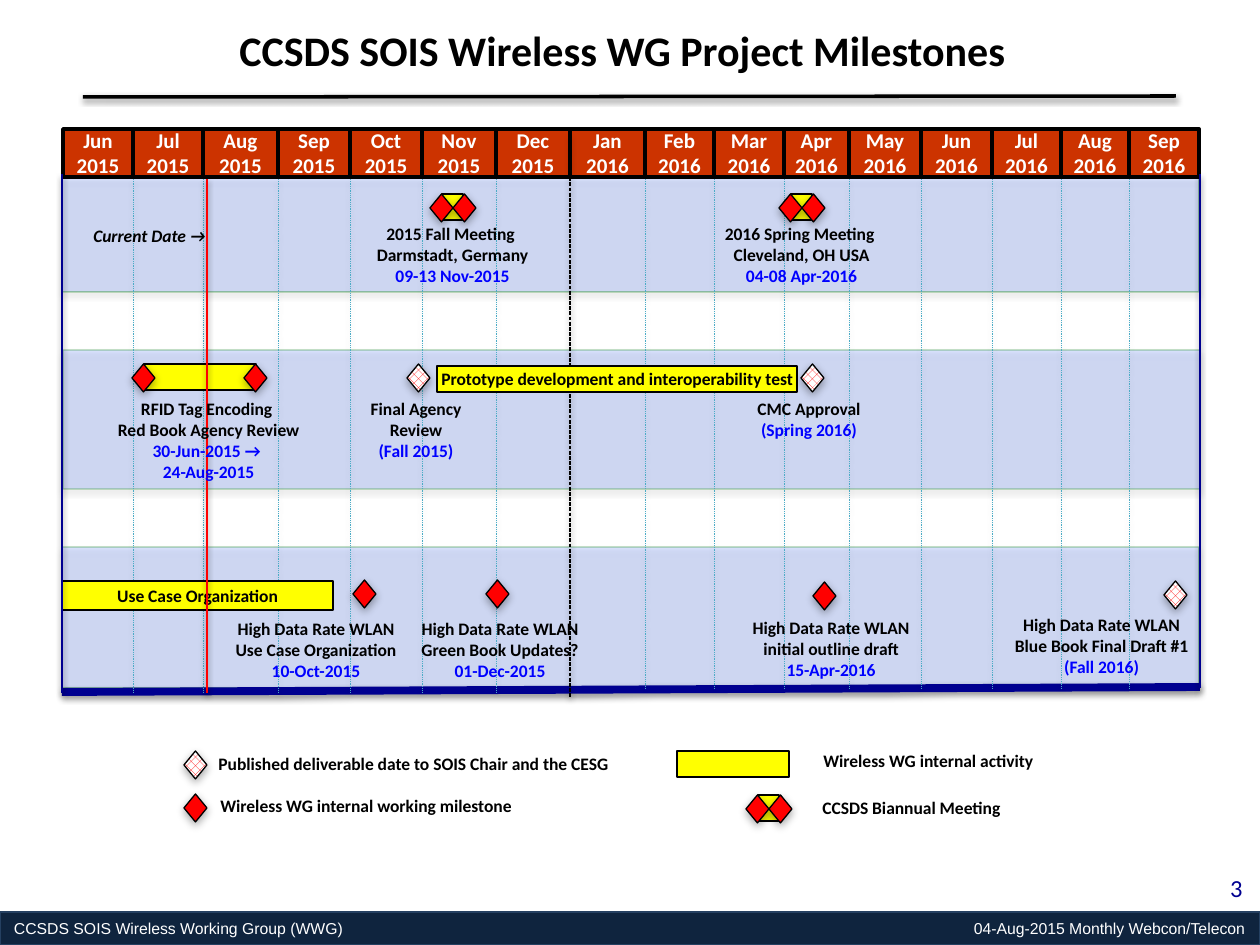
from typing import NamedTuple

from lxml import etree
from pptx import Presentation
from pptx.dml.color import RGBColor
from pptx.enum.dml import MSO_PATTERN
from pptx.enum.shapes import MSO_CONNECTOR, MSO_SHAPE
from pptx.enum.text import MSO_ANCHOR, PP_ALIGN
from pptx.oxml.ns import qn
from pptx.util import Emu, Pt

RECT, DIAMOND = MSO_SHAPE.RECTANGLE, MSO_SHAPE.DIAMOND
STRAIGHT = MSO_CONNECTOR.STRAIGHT
DOTTED_PATTERN = MSO_PATTERN.PERCENT_50
LEFT, CENTER, RIGHT = PP_ALIGN.LEFT, PP_ALIGN.CENTER, PP_ALIGN.RIGHT
MIDDLE = MSO_ANCHOR.MIDDLE

BLACK, WHITE, RED, YELLOW = "000000", "FFFFFF", "FF0000", "FFFF00"
NAVY, BLUE, HEADER, GRID = "000090", "0000FF", "CC3300", "4BACC6"

MONTHS = "Jun Jul Aug Sep Oct Nov Dec Jan Feb Mar Apr May Jun Jul Aug Sep".split()
MONTH_EDGES = [63, 133, 203, 278, 350, 422, 496, 570, 645,
               714, 784, 849, 921, 992, 1061, 1129, 1199]
NEW_YEAR = MONTHS.index("Jan")
HEADER_TOP, HEADER_HEIGHT = 129, 48


class Shadow(NamedTuple):
    alpha: int
    blur: float
    distance: float


BAND_SHADOW = Shadow(35, 3.1, 1.8)
LINE_SHADOW = Shadow(38, 3.1, 1.6)
DIAMOND_SHADOW = Shadow(35, 5, 1.8)


class Box(NamedTuple):
    left: int
    top: int
    width: int
    height: int


class Caption(NamedTuple):
    box: Box
    lines: list[str]
    date_lines: int = 0
    align: PP_ALIGN = CENTER
    italic: bool = False


class Milestone(NamedTuple):
    left: int
    top: int
    published: bool = False


class Activity(NamedTuple):
    box: Box
    label: str = ""


BANDS = [Box(63, 350, 1137, 139), Box(62, 547, 1137, 141), Box(62, 178, 1137, 114)]

ACTIVITIES = [
    Activity(Box(144, 364, 112, 26)),
    Activity(Box(437, 366, 360, 26), "Prototype development and interoperability test"),
    Activity(Box(62, 581, 271, 29), "Use Case Organization"),
    Activity(Box(677, 751, 112, 26)),
]
MEETINGS = [(430, 194), (779, 194), (746, 795)]
MILESTONES = [
    Milestone(244, 364), Milestone(132, 364),
    Milestone(407, 364, True), Milestone(801, 364, True),
    Milestone(353, 580), Milestone(486, 580),
    Milestone(813, 582), Milestone(1164, 581, True),
    Milestone(184, 751, True), Milestone(184, 794),
]
CAPTIONS = [
    Caption(Box(363, 217, 179, 77),
            ["2015 Fall Meeting ", "Darmstadt, Germany", "09-13 Nov-2015"], 1),
    Caption(Box(712, 217, 179, 77),
            ["2016 Spring Meeting ", "Cleveland, OH USA", "04-08 Apr-2016"], 1),
    Caption(Box(93, 392, 231, 97),
            ["RFID Tag Encoding ", "Red Book Agency Review", "30-Jun-2015 → ", "24-Aug-2015"], 2),
    Caption(Box(333, 392, 166, 77), ["Final Agency Review", "(Fall 2015)"], 1),
    Caption(Box(726, 392, 166, 55), ["CMC Approval", "(Spring 2016)"], 1),
    Caption(Box(220, 612, 192, 77),
            ["High Data Rate WLAN", "Use Case Organization", "10-Oct-2015"], 1),
    Caption(Box(399, 612, 202, 77),
            ["High Data Rate WLAN", "Green Book Updates?", "01-Dec-2015"], 1),
    Caption(Box(721, 611, 220, 77),
            ["High Data Rate WLAN", "initial outline draft", "15-Apr-2016"], 1),
    Caption(Box(992, 608, 219, 77),
            ["High Data Rate WLAN", "Blue Book Final Draft #1", "(Fall 2016)"], 1),
    Caption(Box(64, 219, 171, 34), ["Current Date →"], italic=True),
    Caption(Box(206, 747, 474, 34),
            ["Published deliverable date to SOIS Chair and the CESG"], align=LEFT),
    Caption(Box(208, 789, 334, 34), ["Wireless WG internal working milestone"], align=LEFT),
    Caption(Box(811, 744, 238, 34), ["Wireless WG internal activity"], align=LEFT),
    Caption(Box(810, 791, 238, 34), ["CCSDS Biannual Meeting"], align=LEFT),
]


def px(length: int) -> Emu:
    return Emu(round(length * 914400 / 126))


def rgb(color: str) -> RGBColor:
    return RGBColor.from_string(color)


def set_alpha(fill_parent, percent: int) -> None:
    color = fill_parent.find(qn("a:solidFill")).find(qn("a:srgbClr"))
    etree.SubElement(color, qn("a:alpha"), val=str(percent * 1000))


def add_shadow(shape, shadow: Shadow | None) -> None:
    """Replace the theme shadow by the given one; call after fill and line are set."""
    effects = etree.SubElement(shape.element.spPr, qn("a:effectLst"))
    if shadow:
        outer = etree.SubElement(effects, qn("a:outerShdw"), blurRad=str(Pt(shadow.blur)),
                                 dist=str(Pt(shadow.distance)), dir="5400000", rotWithShape="0")
        color = etree.SubElement(outer, qn("a:srgbClr"), val=BLACK)
        etree.SubElement(color, qn("a:alpha"), val=str(shadow.alpha * 1000))


def add_box(slide, kind: MSO_SHAPE, box: Box, fill: str, line: str, weight: float,
            shadow: Shadow | None = None):
    shape = slide.shapes.add_shape(kind, *map(px, box))
    shape.fill.solid()
    shape.fill.fore_color.rgb = rgb(fill)
    shape.line.color.rgb = rgb(line)
    shape.line.width = Pt(weight)
    add_shadow(shape, shadow)
    return shape


def add_line(slide, start: tuple[int, int], end: tuple[int, int], color: str,
             weight: float, dash: str = "solid") -> None:
    line = slide.shapes.add_connector(STRAIGHT, *map(px, start + end))
    line.line.color.rgb = rgb(color)
    line.line.width = Pt(weight)
    etree.SubElement(line.element.spPr.find(qn("a:ln")), qn("a:prstDash"), val=dash)
    add_shadow(line, LINE_SHADOW)


def write(shape, text: str, size: int, color: str, align: PP_ALIGN, font: str = "Calibri",
          bold: bool = True, italic: bool = False, wrap: bool = False) -> None:
    frame = shape.text_frame
    frame.text = text
    frame.word_wrap = wrap
    for paragraph in frame.paragraphs:
        paragraph.alignment = align
        for run in paragraph.runs:
            run.font.size, run.font.name = Pt(size), font
            run.font.bold, run.font.italic = bold, italic
            run.font.color.rgb = rgb(color)


def add_caption(slide, caption: Caption) -> None:
    text_box = slide.shapes.add_textbox(*map(px, caption.box))
    write(text_box, "\n".join(caption.lines), 10, BLACK, caption.align,
          italic=caption.italic, wrap=True)
    first_date = len(caption.lines) - caption.date_lines
    for paragraph in text_box.text_frame.paragraphs[first_date:]:
        paragraph.runs[0].font.color.rgb = rgb(BLUE)


def add_milestone(slide, milestone: Milestone) -> None:
    box = Box(milestone.left, milestone.top, 23, 28)
    diamond = add_box(slide, DIAMOND, box, RED, BLACK, 0.75, DIAMOND_SHADOW)
    if milestone.published:
        diamond.fill.patterned()
        diamond.fill.pattern = DOTTED_PATTERN
        diamond.fill.fore_color.rgb = rgb(RED)
        diamond.fill.back_color.rgb = rgb(WHITE)


def add_activity(slide, activity: Activity) -> None:
    bar = add_box(slide, RECT, activity.box, YELLOW, BLACK, 1.5)
    if activity.label:
        write(bar, activity.label, 10, BLACK, CENTER)
        bar.text_frame.vertical_anchor = MIDDLE


def add_meeting(slide, left: int, top: int) -> None:
    add_activity(slide, Activity(Box(left + 12, top, 21, 26)))
    for offset in (23, 0):
        add_milestone(slide, Milestone(left + offset, top))


def add_calendar(slide) -> None:
    for band in BANDS:
        shape = add_box(slide, RECT, band, "3366FF", "008000", 0.75, BAND_SHADOW)
        set_alpha(shape.element.spPr, 18)
        set_alpha(shape.element.spPr.find(qn("a:ln")), 33)
    add_line(slide, (62, 692), (1200, 687), NAVY, 4.5)
    for index, month in enumerate(MONTHS):
        left, right = MONTH_EDGES[index:index + 2]
        cell = add_box(slide, RECT, Box(left, HEADER_TOP, right - left, HEADER_HEIGHT),
                       HEADER, BLACK, 2)
        write(cell, f"{month}\n{2015 if index < NEW_YEAR else 2016}", 12, WHITE, CENTER)
        cell.text_frame.vertical_anchor = MIDDLE
    for index, edge in enumerate(MONTH_EDGES[1:-1], start=1):
        if index == NEW_YEAR:
            add_line(slide, (edge, 136), (edge, 697), BLACK, 0.75, "sysDash")
        else:
            bottom = 693 if index < NEW_YEAR else 688
            add_line(slide, (edge, 179), (edge, bottom), GRID, 0.25, "dot")


def add_footer(slide) -> None:
    bar = add_box(slide, RECT, Box(0, 912, 1260, 33), "0F243E", "254061", 0.75)
    write(bar, "CCSDS SOIS Wireless Working Group (WWG)\t04-Aug-2015 Monthly Webcon/Telecon",
          9, WHITE, LEFT, "Arial", bold=False, wrap=True)
    frame = bar.text_frame
    frame.margin_left = frame.margin_right = px(14)
    frame.vertical_anchor = MIDDLE
    tabs = etree.SubElement(frame.paragraphs[0]._p.get_or_add_pPr(), qn("a:tabLst"))
    etree.SubElement(tabs, qn("a:tab"), pos=str(px(1231)), algn="r")
    page_number = slide.shapes.add_textbox(*map(px, Box(1172, 867, 83, 44)))
    write(page_number, "3", 14, NAVY, RIGHT, bold=False, wrap=True)


def main() -> None:
    deck = Presentation()
    deck.slide_width, deck.slide_height = px(1260), px(945)
    slide = deck.slides.add_slide(deck.slide_layouts[6])
    add_footer(slide)
    title = slide.shapes.add_textbox(*map(px, Box(227, 18, 801, 63)))
    write(title, "CCSDS SOIS Wireless WG Project Milestones", 24, BLACK, LEFT)
    add_line(slide, (83, 97), (1176, 96), BLACK, 2)
    add_calendar(slide)
    for activity in ACTIVITIES:
        add_activity(slide, activity)
    for left, top in MEETINGS:
        add_meeting(slide, left, top)
    for milestone in MILESTONES:
        add_milestone(slide, milestone)
    add_line(slide, (207, 179), (207, 693), RED, 1)
    for caption in CAPTIONS:
        add_caption(slide, caption)
    add_line(slide, (62, 174), (62, 693), NAVY, 1)
    add_line(slide, (1200, 174), (1200, 688), NAVY, 1)
    deck.save("out.pptx")


if __name__ == "__main__":
    main()
